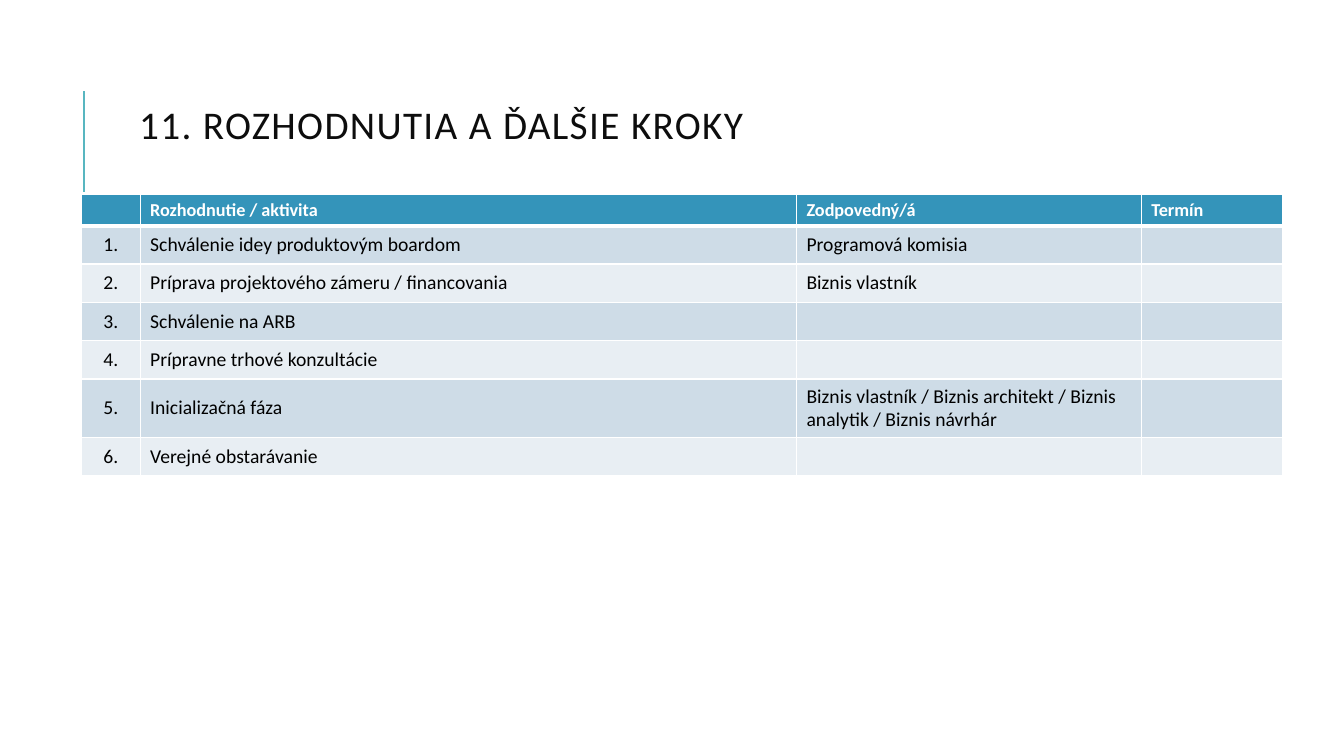
from lxml import etree
from pptx import Presentation
from pptx import util as u
from pptx.dml.color import RGBColor
from pptx.enum import shapes, text
from pptx.oxml.ns import qn

COLORS = {
    "title": "0D0D0D",
    "accent": "58B6C0",
    "header": "3494BA",
    "band_dark": "CEDCE7",
    "band_light": "E8EEF3",
    "white": "FFFFFF",
    "black": "000000",
}
FONT = "Calibri"
COLUMN_WIDTHS = [0.58, 6.51, 3.42, 1.4]
ROW_HEIGHTS = [0.31] + [0.38] * 4 + [0.58, 0.38]
HEADINGS = ["", "Rozhodnutie / aktivita", "Zodpovedný/á", "Termín"]
STEPS = [
    ("Schválenie idey produktovým boardom", "Programová komisia"),
    ("Príprava projektového zámeru / financovania", "Biznis vlastník"),
    ("Schválenie na ARB", ""),
    ("Prípravne trhové konzultácie", ""),
    ("Inicializačná fáza",
     "Biznis vlastník / Biznis architekt / Biznis analytik / Biznis návrhár"),
    ("Verejné obstarávanie", ""),
]


def color(name):
    return RGBColor.from_string(COLORS[name])


def format_font(font, size, color_name, bold=False):
    font.name = FONT
    font.size = u.Pt(size)
    font.bold = bold
    font.color.rgb = color(color_name)


def add_title(page, wording):
    title = page.shapes.title
    title.left, title.top = u.Inches(1.38), u.Inches(0.86)
    title.width, title.height = u.Inches(10), u.Inches(0.82)
    frame = title.text_frame
    frame.margin_left = frame.margin_right = 0
    frame.margin_top = frame.margin_bottom = 0
    frame.vertical_anchor = text.MSO_ANCHOR.MIDDLE
    frame.word_wrap = True
    frame.auto_size = text.MSO_AUTO_SIZE.NONE
    para = frame.paragraphs[0]
    para.alignment = text.PP_ALIGN.LEFT
    para.line_spacing = 0.8
    span = para.add_run()
    span.text = wording
    format_font(para.font, 28, "title")
    span.font._element.set("spc", "100")


def add_accent_line(page):
    line = page.shapes.add_connector(
        shapes.MSO_CONNECTOR.STRAIGHT,
        u.Inches(0.83), u.Inches(1.9), u.Inches(0.83), u.Inches(0.9))
    line.line.color.rgb = color("accent")
    line.line.width = u.Pt(1.5)
    etree.SubElement(line._element.spPr, qn("a:effectLst"))


def add_border(cell, side, points):
    properties = cell._tc.get_or_add_tcPr()
    border = etree.SubElement(
        properties, qn(f"a:ln{side}"), w=str(u.Pt(points)))
    fill = etree.SubElement(border, qn("a:solidFill"))
    etree.SubElement(fill, qn("a:srgbClr"), val=COLORS["white"])


def format_cell(cell, wording, row, column):
    heading = row == 0
    widths = {"L": 1, "R": 1, "T": 3 if row == 1 else 1, "B": 3 if heading else 1}
    for side, points in widths.items():
        add_border(cell, side, points)
    band = "header" if heading else "band_dark" if row % 2 else "band_light"
    cell.fill.solid()
    cell.fill.fore_color.rgb = color(band)
    cell.vertical_anchor = text.MSO_ANCHOR.MIDDLE
    cell.margin_top = cell.margin_bottom = u.Inches(0.04)
    para = cell.text_frame.paragraphs[0]
    centred = column == 0 and not heading
    para.alignment = text.PP_ALIGN.CENTER if centred else text.PP_ALIGN.LEFT
    size = 13 if heading else 14
    if wording:
        para.add_run().text = wording
    else:
        etree.SubElement(para._p, qn("a:endParaRPr"), sz=str(size * 100))
    format_font(para.font, size, "white" if heading else "black", heading)


def add_steps_table(page):
    rows = [HEADINGS] + [
        (f"{number}.", activity, owner, "")
        for number, (activity, owner) in enumerate(STEPS, 1)]
    table = page.shapes.add_table(
        len(rows), len(HEADINGS), u.Inches(0.81), u.Inches(1.93),
        u.Inches(sum(COLUMN_WIDTHS)), u.Inches(sum(ROW_HEIGHTS))).table
    for column, width in zip(table.columns, COLUMN_WIDTHS):
        column.width = u.Inches(width)
    for row, height in zip(table.rows, ROW_HEIGHTS):
        row.height = u.Inches(height)
    for row, wordings in enumerate(rows):
        for column, wording in enumerate(wordings):
            format_cell(table.cell(row, column), wording, row, column)


def main():
    deck = Presentation()
    deck.slide_width, deck.slide_height = u.Inches(13.33), u.Inches(7.5)
    page = deck.slides.add_slide(deck.slide_layouts[5])
    add_accent_line(page)
    add_title(page, "11. ROZHODNUTIA A ĎALŠIE KROKY")
    add_steps_table(page)
    deck.save("out.pptx")


if __name__ == "__main__":
    main()
